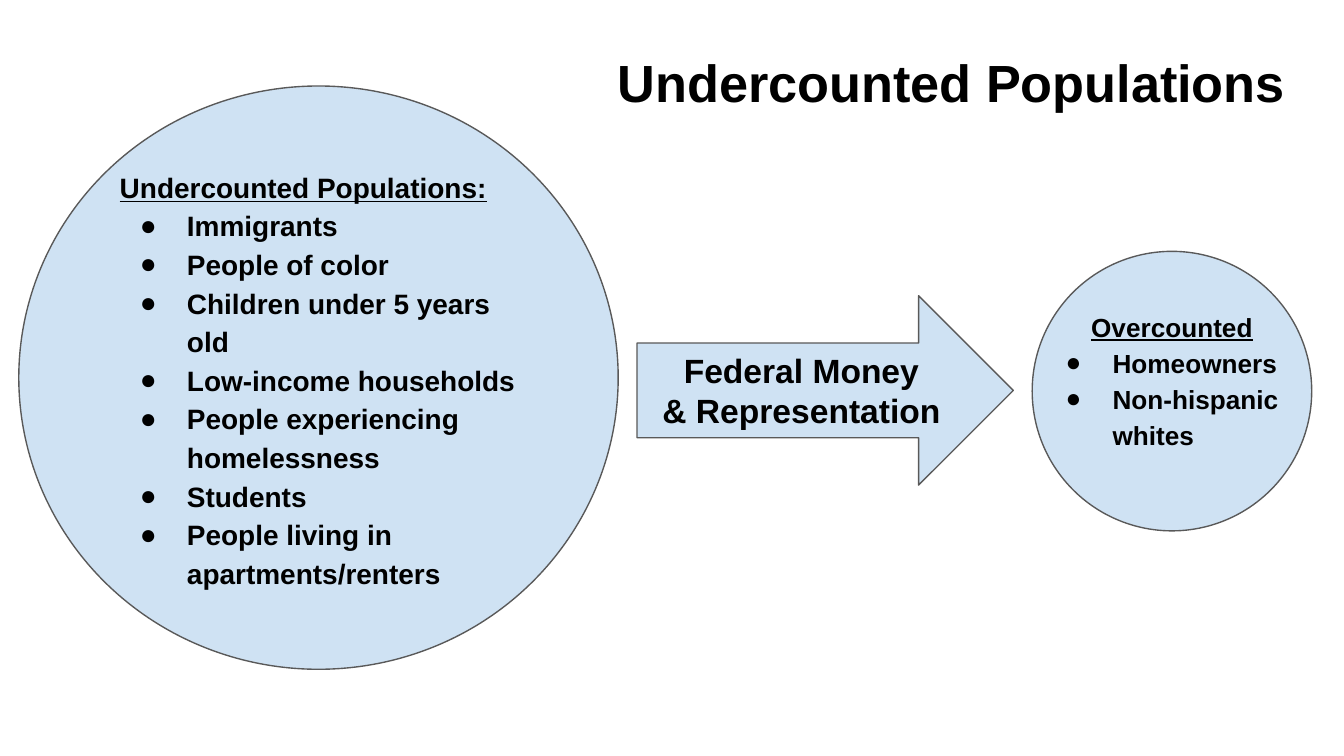
"""Build a slide contrasting undercounted and overcounted populations."""
from dataclasses import dataclass

from lxml.etree import SubElement
from pptx import Presentation
from pptx.dml.color import RGBColor
from pptx.enum.shapes import MSO_SHAPE
from pptx.enum.text import MSO_ANCHOR, MSO_AUTO_SIZE, PP_ALIGN
from pptx.oxml.ns import qn
from pptx.shapes.autoshape import Shape
from pptx.slide import Slide
from pptx.text.text import TextFrame
from pptx.util import Inches, Pt


@dataclass(frozen=True)
class Theme:
    font: str = "Arial"
    text: str = "000000"
    fill: str = "CFE2F3"
    line: str = "595959"
    title: int = 28
    arrow: int = 18
    under: int = 15
    over: int = 14


@dataclass(frozen=True)
class Box:
    left: float
    top: float
    width: float
    height: float

    def lengths(self) -> tuple:
        return tuple(map(Inches, (self.left, self.top, self.width, self.height)))


@dataclass(frozen=True)
class Group:
    heading: str
    items: tuple[str, ...]
    size: int
    align: PP_ALIGN


THEME = Theme()
UNDER = Group(
    "Undercounted Populations:",
    (
        "Immigrants",
        "People of color",
        "Children under 5 years old",
        "Low-income households",
        "People experiencing homelessness",
        "Students",
        "People living in apartments/renters",
    ),
    THEME.under,
    PP_ALIGN.LEFT,
)
OVER = Group("Overcounted", ("Homeowners", "Non-hispanic whites"), THEME.over, PP_ALIGN.CENTER)


def write(tf: TextFrame, lines: tuple[str, ...], size: int, align: PP_ALIGN, anchor: MSO_ANCHOR) -> None:
    tf.word_wrap = True
    tf.auto_size = MSO_AUTO_SIZE.NONE
    tf.vertical_anchor = anchor
    tf.margin_left = tf.margin_right = tf.margin_top = tf.margin_bottom = Inches(0.1)
    tf.text = "\n".join(lines)
    for p in tf.paragraphs:
        p.alignment = align
        for r in p.runs:
            r.font.name = THEME.font
            r.font.size = Pt(size)
            r.font.bold = True
            r.font.color.rgb = RGBColor.from_string(THEME.text)


def write_group(tf: TextFrame, group: Group, anchor: MSO_ANCHOR) -> None:
    write(tf, (group.heading, *group.items), group.size, PP_ALIGN.LEFT, anchor)
    heading, *items = tf.paragraphs
    heading.alignment = group.align
    heading.runs[0].font.underline = True
    heading.line_spacing = 1.15
    for p in items:
        p.line_spacing = 1.15
        pPr = p._p.get_or_add_pPr()
        pPr.set("marL", str(Inches(0.5)))
        pPr.set("indent", str(Inches(-0.35)))
        color = SubElement(pPr, qn("a:buClr"))
        SubElement(color, qn("a:srgbClr"), val=THEME.text)
        SubElement(pPr, qn("a:buFont"), typeface=THEME.font)
        SubElement(pPr, qn("a:buChar"), char="●")


def add_figure(s: Slide, kind: MSO_SHAPE, box: Box) -> Shape:
    sp = s.shapes.add_shape(kind, *box.lengths())
    sp.shadow.inherit = False
    sp.fill.solid()
    sp.fill.fore_color.rgb = RGBColor.from_string(THEME.fill)
    sp.line.color.rgb = RGBColor.from_string(THEME.line)
    sp.line.width = Pt(0.75)
    return sp


def main() -> None:
    prs = Presentation()
    prs.slide_width = Inches(10)
    prs.slide_height = prs.slide_width * 9 // 16
    s = prs.slides.add_slide(prs.slide_layouts[5])

    title = s.shapes.title
    title.left, title.top, title.width, title.height = Box(0.34, 0.27, 9.32, 0.63).lengths()
    write(title.text_frame, ("Undercounted Populations",), THEME.title, PP_ALIGN.RIGHT, MSO_ANCHOR.TOP)

    under = add_figure(s, MSO_SHAPE.OVAL, Box(0.14, 0.64, 4.46, 4.34))
    write_group(under.text_frame, UNDER, MSO_ANCHOR.MIDDLE)

    arrow = add_figure(s, MSO_SHAPE.RIGHT_ARROW, Box(4.74, 2.2, 2.8, 1.41))
    labels = ("Federal Money", "& Representation")
    write(arrow.text_frame, labels, THEME.arrow, PP_ALIGN.CENTER, MSO_ANCHOR.MIDDLE)

    add_figure(s, MSO_SHAPE.OVAL, Box(7.68, 1.87, 2.08, 2.08))
    over = s.shapes.add_textbox(*Box(7.68, 2.18, 2.08, 1.27).lengths())
    write_group(over.text_frame, OVER, MSO_ANCHOR.TOP)

    prs.save("out.pptx")


if __name__ == "__main__":
    main()
